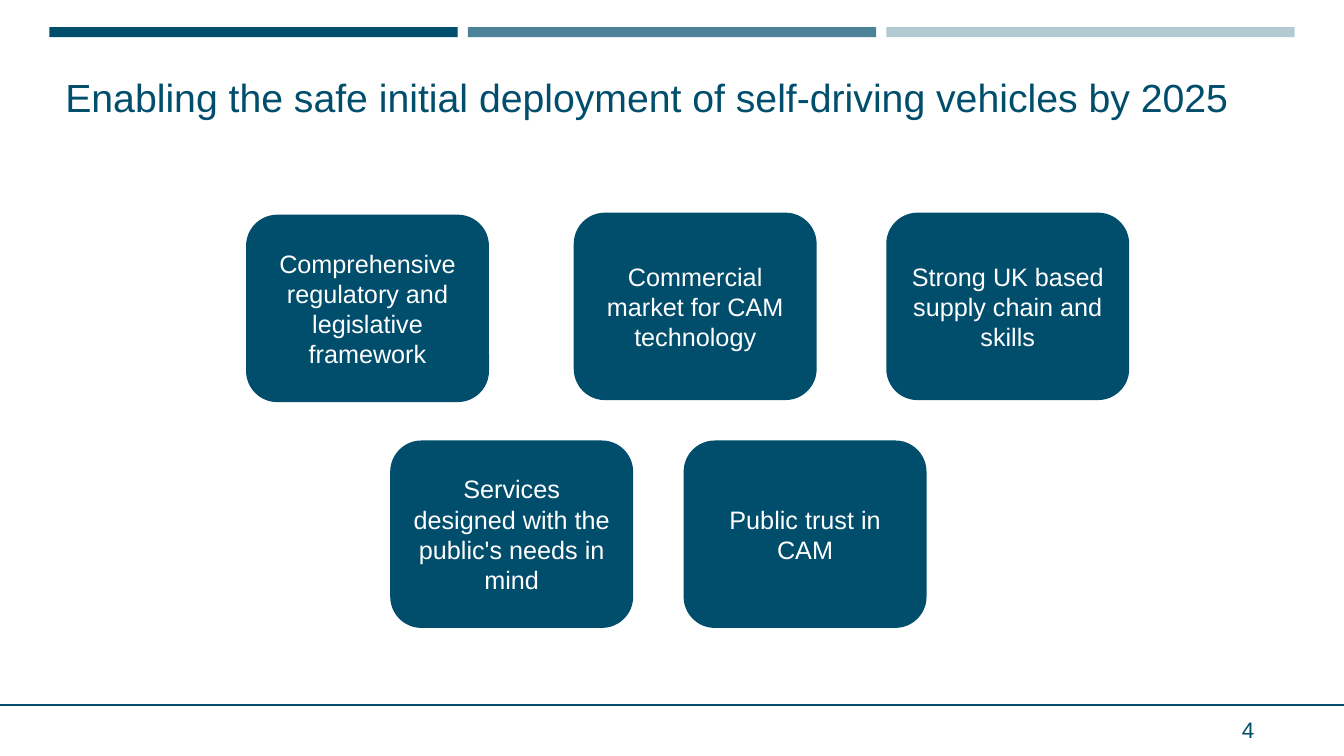
import pptx
import pptx.util
import pptx.dml.color
import pptx.enum.shapes
import pptx.enum.text
import pptx.oxml.ns
import lxml.etree

Inches = pptx.util.Inches
Pt = pptx.util.Pt
SHAPES = pptx.enum.shapes.MSO_SHAPE
ANCHOR = pptx.enum.text.MSO_ANCHOR
ALIGN = pptx.enum.text.PP_ALIGN

TEAL = "004E6C"
WHITE = "FFFFFF"
TITLE = "Enabling the safe initial deployment of self-driving vehicles by 2025"
PAGE_NUMBER = "4"
BANDS = [TEAL, "4D8398", "B3CAD3"]
GOALS = [
    ("Comprehensive regulatory and legislative framework", 2.44, 2.13),
    ("Commercial market for CAM technology", 5.69, 2.11),
    ("Strong UK based supply chain and skills", 8.79, 2.11),
    ("Services designed with the public's needs in mind", 3.87, 4.37),
    ("Public trust in CAM", 6.78, 4.37),
]
GOAL_SIZE = (2.41, 1.86)
BAND_LEFT, BAND_TOP, BAND_STEP = 0.49, 0.27, 4.15
BAND_SIZE = (4.05, 0.1)
FOOTER_Y = 6.99


def color(value):
    return pptx.dml.color.RGBColor.from_string(value)


def add_block(slide, preset, left, top, size, fill):
    block = slide.shapes.add_shape(preset, *map(Inches, (left, top, *size)))
    block.shadow.inherit = False
    block.fill.solid()
    block.fill.fore_color.rgb = color(fill)
    block.line.fill.background()
    return block


def write(holder, text, size, ink, anchor, paragraph_format):
    frame = holder.text_frame
    frame.word_wrap = True
    frame.vertical_anchor = anchor
    paragraph = frame.paragraphs[0]
    for name, value in paragraph_format.items():
        setattr(paragraph, name, value)
    run = paragraph.add_run()
    run.text = text
    font_format = {"name": "Arial", "size": Pt(size)}
    for name, value in font_format.items():
        setattr(run.font, name, value)
    run.font.color.rgb = color(ink)


def main():
    deck = pptx.Presentation()
    deck.slide_width = Inches(13.33)
    deck.slide_height = Inches(7.5)
    slide = deck.slides.add_slide(deck.slide_layouts[6])

    footer_rule = slide.shapes.add_connector(
        pptx.enum.shapes.MSO_CONNECTOR.STRAIGHT,
        0, Inches(FOOTER_Y), deck.slide_width, Inches(FOOTER_Y))
    footer_rule.line.color.rgb = color(TEAL)
    footer_rule.line.width = Pt(1.5)
    lxml.etree.SubElement(footer_rule._element.spPr, pptx.oxml.ns.qn("a:effectLst"))

    for index, fill in enumerate(BANDS):
        add_block(slide, SHAPES.RECTANGLE, BAND_LEFT + index * BAND_STEP,
                  BAND_TOP, BAND_SIZE, fill)

    page_number = slide.shapes.add_textbox(*map(Inches, (12.22, 7.04, 0.56, 0.4)))
    write(page_number, PAGE_NUMBER, 16, TEAL, ANCHOR.MIDDLE, {"space_after": Pt(6)})

    title = slide.shapes.add_textbox(*map(Inches, (0.55, 0.48, 12.23, 0.77)))
    write(title, TITLE, 28, TEAL, ANCHOR.BOTTOM, {"line_spacing": 0.9})

    for text, left, top in GOALS:
        goal = add_block(slide, SHAPES.ROUNDED_RECTANGLE, left, top, GOAL_SIZE, TEAL)
        write(goal, text, 18, WHITE, ANCHOR.MIDDLE, {"alignment": ALIGN.CENTER})

    deck.save("out.pptx")


if __name__ == "__main__":
    main()
